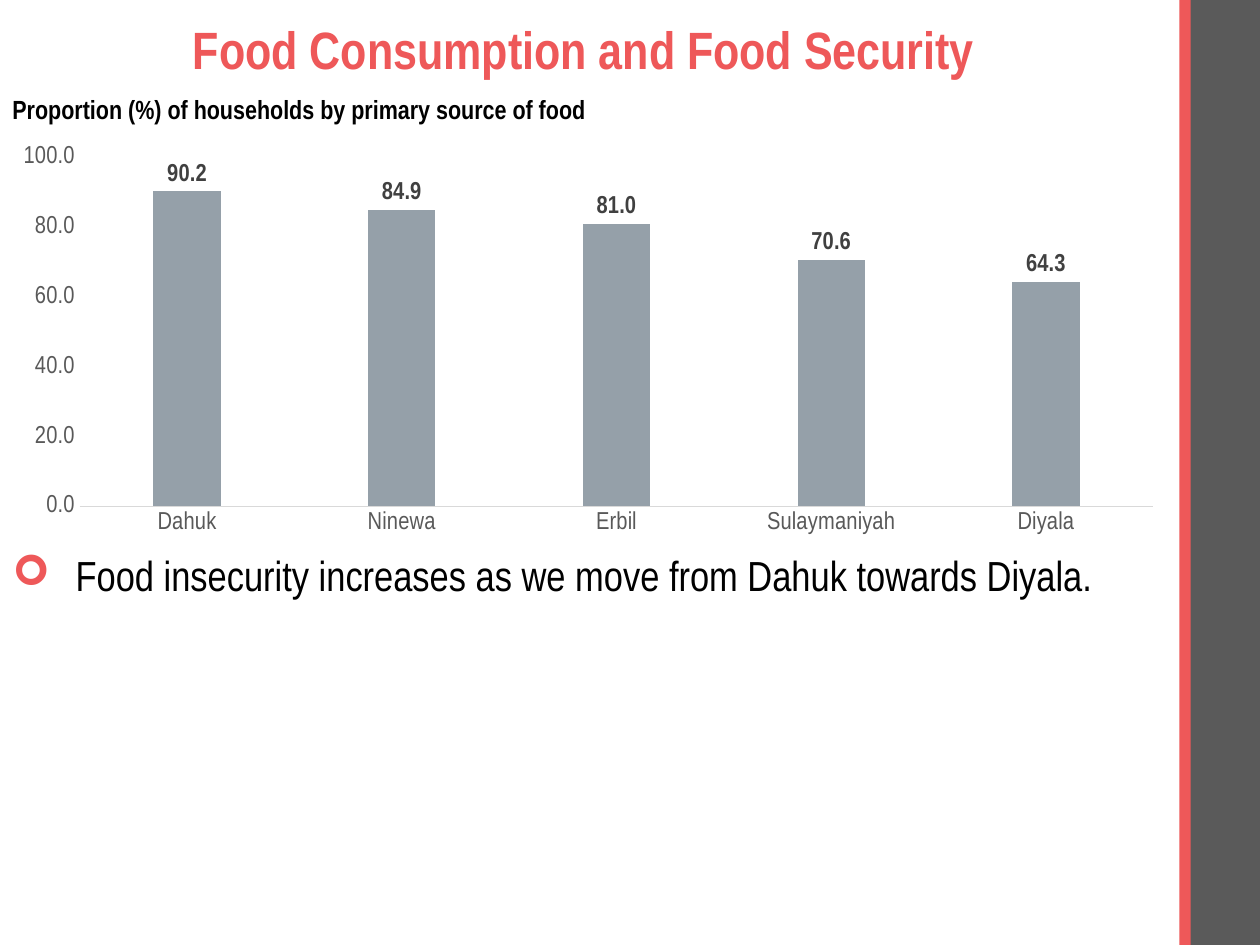
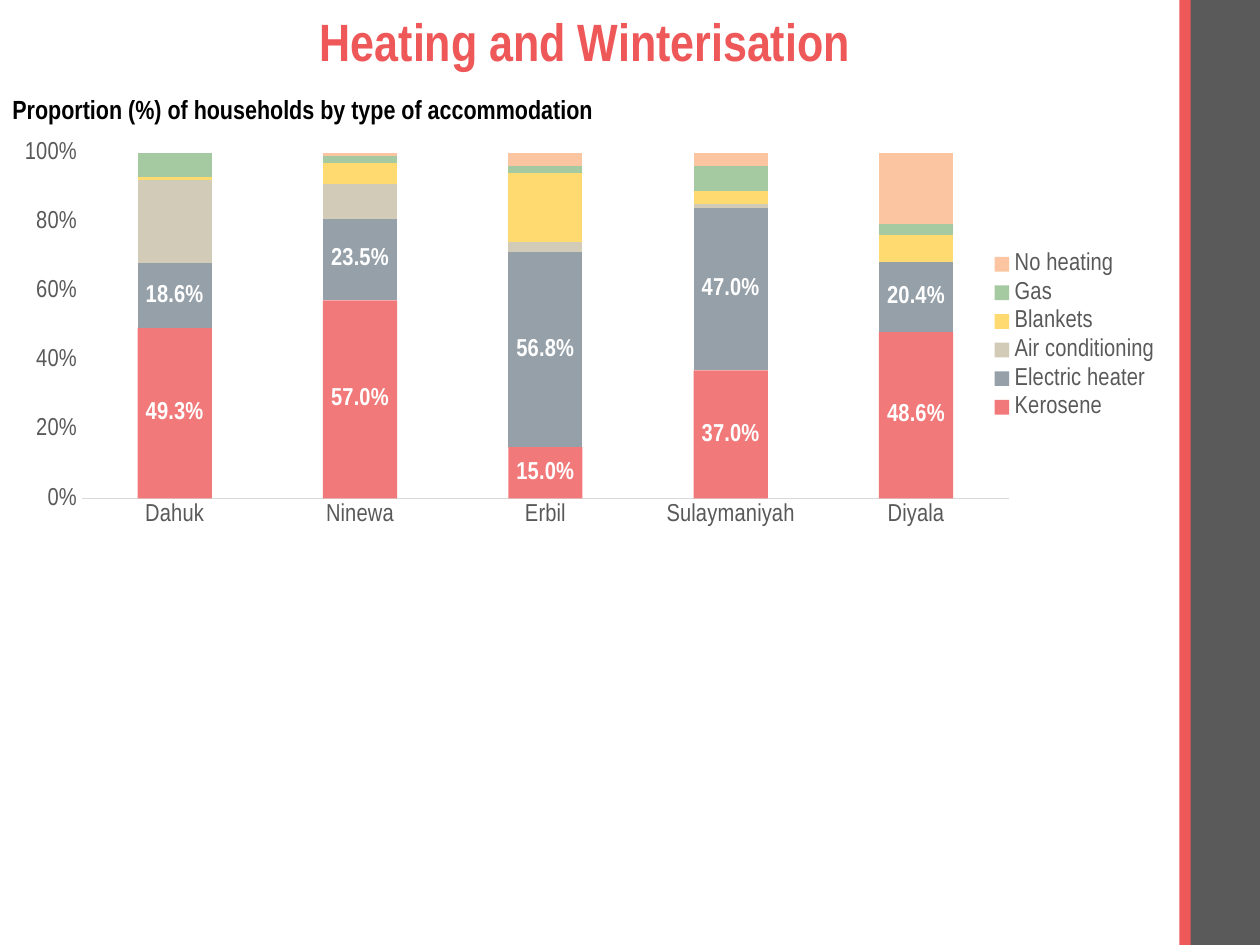
from lxml.etree import SubElement as Sub
from pptx import Presentation
from pptx.chart.data import CategoryChartData as Data
from pptx.dml.color import RGBColor as RGB
from pptx.enum.chart import XL_CHART_TYPE as Kind, XL_LABEL_POSITION as Spot
from pptx.enum.chart import XL_LEGEND_POSITION as Side, XL_TICK_MARK as Tick
from pptx.enum.shapes import MSO_SHAPE as Shape
from pptx.enum.text import MSO_ANCHOR as Anchor, MSO_AUTO_SIZE as Fit, PP_ALIGN as Align
from pptx.oxml import parse_xml
from pptx.oxml.ns import nsdecls, qn
from pptx.util import Inches, Pt

# Grid of 100 columns by 75 rows; boxes are (column, row, columns, rows)
COLS, ROWS = 100, 75
WIDE, HIGH = Inches(10), Inches(7.5)

FONT = "Arial Narrow"
CORAL = RGB(0xEE, 0x58, 0x59)
SLATE = RGB(0x95, 0xA0, 0xA9)
SAND = RGB(0xD2, 0xCB, 0xB8)
YELLOW = RGB(0xFF, 0xDA, 0x71)
GREEN = RGB(0xA5, 0xC9, 0xA1)
PEACH = RGB(0xFA, 0xC5, 0xA0)
DARK = RGB(0x5A, 0x5A, 0x5A)
GREY = RGB(0x59, 0x59, 0x59)
INK = RGB(0x40, 0x40, 0x40)
RULE = RGB(0xD9, 0xD9, 0xD9)
BLACK = RGB(0, 0, 0)
WHITE = RGB(0xFF, 0xFF, 0xFF)

BANDS = [((94.3, 0, 5.7, ROWS), DARK), ((93.6, 0, 0.9, ROWS), CORAL)]
HEAD = (0, 6.9, 61.2, 3.5)
AREAS = ["Dahuk", "Ninewa", "Erbil", "Sulaymaniyah", "Diyala"]
FOOD = [90.2, 84.9, 81, 70.6, 64.3]
# Name, values, colour, opacity in %, labelled
HEAT = [
    ("Kerosene", [0.493, 0.57, 0.15, 0.37, 0.486], CORAL, 80, True),
    ("Electric heater", [0.186, 0.235, 0.568, 0.47, 0.204], SLATE, 100, True),
    ("Air conditioning", [0.24, 0.1, 0.03, 0.01, 0], SAND, 100, False),
    ("Blankets", [0.01, 0.06, 0.2, 0.04, 0.08], YELLOW, 100, False),
    ("Gas", [0.07, 0.02, 0.02, 0.07, 0.03], GREEN, 100, False),
    ("No heating", [0, 0.01, 0.04, 0.04, 0.21], PEACH, 100, False),
]


def place(box):
    col, row, wide, high = box
    return (int(WIDE * col / COLS), int(HIGH * row / ROWS),
            int(WIDE * wide / COLS), int(HIGH * high / ROWS))


def move(shape, box):
    shape.left, shape.top, shape.width, shape.height = place(box)


def style(font, size, color, bold=False):
    font.name, font.size, font.bold = FONT, Pt(size), bold
    font.color.rgb = color


def write(shape, text, size, color, bold=False):
    frame = shape.text_frame
    frame.text = text
    frame.word_wrap = True
    frame.auto_size = Fit.NONE
    para = frame.paragraphs[0]
    para.space_before = Pt(0)
    style(para.runs[0].font, size, color, bold)
    return para


def add_bands(prs, slide):
    # Side bands, moved onto the master so every slide shares them
    tree = prs.slide_master.element.cSld.spTree
    for spot, (box, color) in enumerate(BANDS, 2):
        band = slide.shapes.add_shape(Shape.RECTANGLE, *place(box))
        band.shadow.inherit = False
        band.fill.solid()
        band.fill.fore_color.rgb = color
        band.line.fill.background()
        tree.insert(spot, band.element)


def add_heads(slide, title, box, head):
    # Slide title and chart heading
    move(slide.shapes.title, box)
    para = write(slide.shapes.title, title, 30, CORAL, True)
    para.alignment = Align.CENTER
    para.line_spacing = 0.9
    slide.shapes.title.text_frame.vertical_anchor = Anchor.MIDDLE
    write(slide.shapes.add_textbox(*place(HEAD)), head, 15, BLACK, True)


def add_list(slide, box, text):
    # Arrow bullet
    body = slide.placeholders[1]
    move(body, box)
    para = write(body, text, 24, BLACK)
    para.line_spacing = 0.9
    props = para._p.get_or_add_pPr()
    props.set("marL", str(Inches(0.5)))
    props.set("indent", str(-Inches(0.5)))
    tint = Sub(Sub(props, qn("a:buClr")), qn("a:srgbClr"))
    tint.set("val", str(CORAL))
    Sub(props, qn("a:buFont")).set("typeface", "Wingdings")
    Sub(props, qn("a:buChar")).set("char", "➢")


def add_bars(slide, box, kind, rows, form, step, gap, lap):
    # Column chart with the look both slides share
    data = Data(number_format=form)
    data.categories = AREAS
    for name, vals, *_ in rows:
        data.add_series(name, vals)
    chart = slide.shapes.add_chart(kind, *place(box), data).chart
    style(chart.font, 14, BLACK)
    chart.has_title = chart.has_legend = False

    base, side = chart.category_axis, chart.value_axis
    for axis in (base, side):
        axis.major_tick_mark = axis.minor_tick_mark = Tick.NONE
        axis.has_major_gridlines = False
        style(axis.tick_labels.font, 14, GREY)
    base.format.line.color.rgb = RULE
    base.format.line.width = Pt(0.75)
    side.format.line.fill.background()
    side.minimum_scale, side.major_unit = 0, step

    plot = chart.plots[0]
    plot.gap_width, plot.overlap, plot.vary_by_categories = gap, lap, False
    for bar, (_, _, color, alpha, _) in zip(plot.series, rows):
        fill = bar.format.fill
        fill.solid()
        fill.fore_color.rgb = color
        if alpha < 100:
            tint = bar._element.find(".//" + qn("a:srgbClr"))
            Sub(tint, qn("a:alpha")).set("val", str(alpha * 1000))
    return chart


def add_tags(bar, form, color, spot):
    # Value labels of one series
    tags = bar.data_labels
    tags.show_value = True
    tags.number_format, tags.number_format_is_linked = form, False
    tags.position = spot
    style(tags.font, 14, color, True)


def set_ticks(chart, form):
    ticks = chart.value_axis.tick_labels
    ticks.number_format, ticks.number_format_is_linked = form, False


def set_plot(chart, x, y, w, h):
    # Fixed inner plot area, in shares of the chart
    area = chart._chartSpace.chart.plotArea
    for old in area.findall(qn("c:layout")):
        area.remove(old)
    sizes = "".join(f'<c:{key} val="{val}"/>' for key, val in zip("xywh", (x, y, w, h)))
    area.insert(0, parse_xml(
        f'<c:layout {nsdecls("c")}><c:manualLayout><c:layoutTarget val="inner"/>'
        f'<c:xMode val="edge"/><c:yMode val="edge"/>{sizes}</c:manualLayout></c:layout>'))


def food_slide(slide):
    add_heads(slide, "Food Consumption and Food Security", (2.9, 2.2, 86.9, 3.9),
              "Proportion (%) of households by primary source of food")
    rows = [("Series 1", FOOD, SLATE, 100, True)]
    chart = add_bars(slide, (0, 10.9, 93.4, 32.2), Kind.COLUMN_CLUSTERED,
                     rows, "0.0", 20, 219, -27)
    chart.value_axis.maximum_scale = 100
    set_ticks(chart, "0.0")
    add_tags(chart.plots[0].series[0], "0.0", INK, Spot.OUTSIDE_END)
    add_list(slide, (0, 43.6, 94, 31.2),
             "Food insecurity increases as we move from Dahuk towards Diyala.")


def heat_slide(slide):
    add_heads(slide, "Heating and Winterisation", (3, 0.5, 86.9, 6),
              "Proportion (%) of households by type of accommodation")
    chart = add_bars(slide, (0, 10.5, 93.1, 32.3), Kind.COLUMN_STACKED_100,
                     HEAT, "0.0%", 0.2, 150, 100)
    set_ticks(chart, "0%")
    set_plot(chart, 0.07, 0.05, 0.79, 0.85)
    for bar, row in zip(chart.plots[0].series, HEAT):
        if row[-1]:
            add_tags(bar, "0.0%", WHITE, Spot.CENTER)
    chart.has_legend = True
    chart.legend.position = Side.RIGHT
    chart.legend.include_in_layout = False
    style(chart.legend.font, 14, GREY)


def main():
    prs = Presentation()
    prs.slide_width, prs.slide_height = WIDE, HIGH
    full, bare = prs.slide_layouts[1], prs.slide_layouts[5]
    first = prs.slides.add_slide(full)
    add_bands(prs, first)
    food_slide(first)
    heat_slide(prs.slides.add_slide(bare))
    prs.save("out.pptx")


if __name__ == "__main__":
    main()
